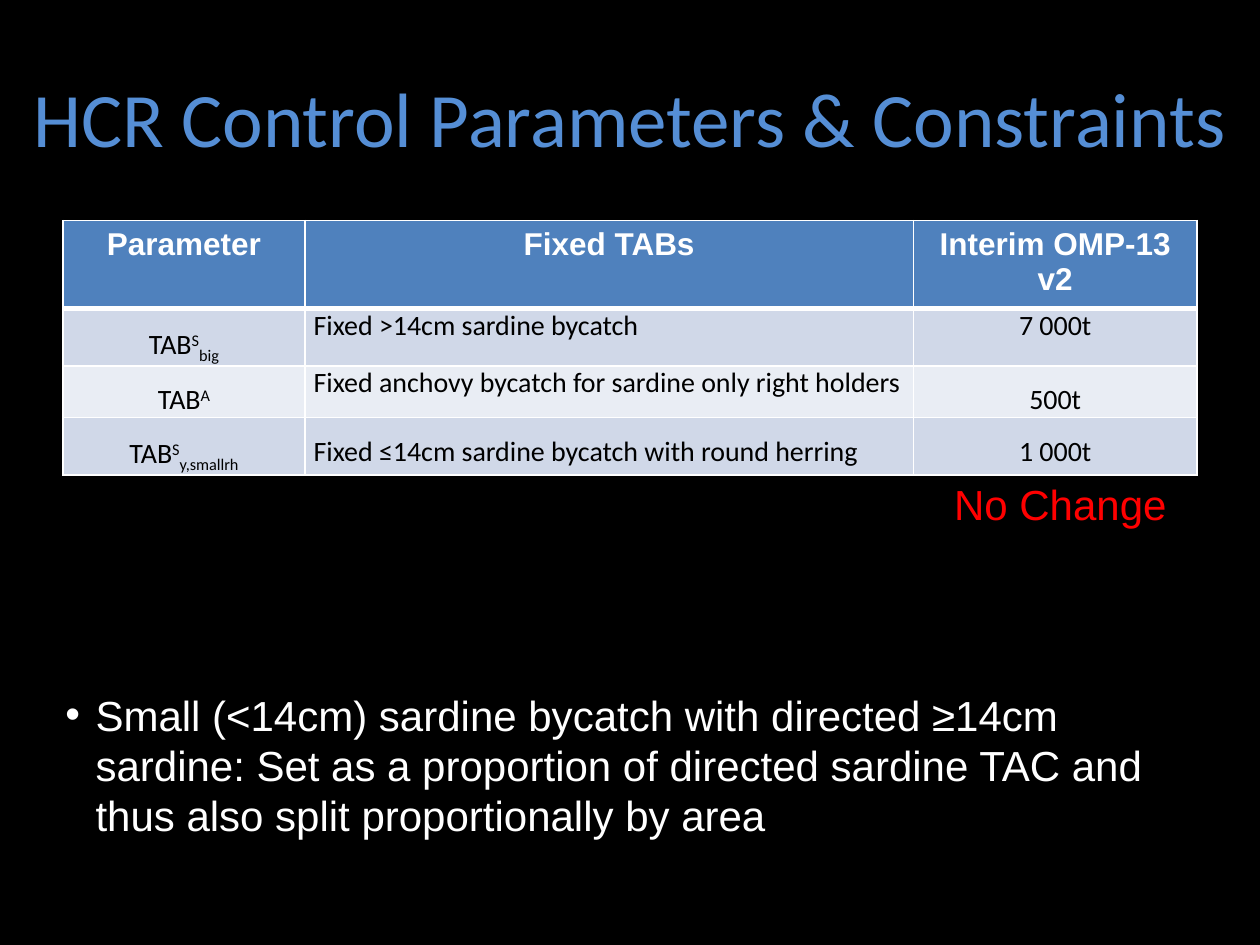
from dataclasses import dataclass
from lxml.etree import SubElement
from pptx import Presentation
from pptx.dml.color import RGBColor as RGB
from pptx.enum.text import MSO_ANCHOR as Anchor, PP_ALIGN as Align
from pptx.oxml.ns import qn
from pptx.util import Inches, Pt


@dataclass(frozen=True)
class Theme:
    background: str = "000000"
    title: str = "558ED5"
    header: str = "4F81BD"
    bands: tuple = ("D0D8E8", "E9EDF4")
    light: str = "FFFFFF"
    dark: str = "000000"
    alert: str = "FF0000"
    heading_font: str = "Calibri"
    body_font: str = "Arial"
    title_size: int = 44
    note_size: int = 24
    header_size: int = 18
    cell_size: int = 16


THEME = Theme()
WIDTH, HEIGHT = 10, 7.5
TITLE = "HCR Control Parameters & Constraints"
HEADERS = ["Parameter", "Fixed TABs", "Interim OMP-13 v2"]
CENTER, LEFT, JUSTIFY = Align.CENTER, Align.LEFT, Align.JUSTIFY
SUPER, SUB = 30, -25
ROWS = [
    [([("TAB", 0), ("S", SUPER), ("big", SUB)], CENTER, 1.5),
     ("Fixed >14cm sardine bycatch", LEFT, 1),
     ("7 000t", CENTER, 1)],
    [([("TAB", 0), ("A", SUPER)], CENTER, 1.5),
     ("Fixed anchovy bycatch for sardine only right holders", LEFT, 1),
     ("500t", CENTER, 1.5)],
    [([("TAB", 0), ("S", SUPER), ("y,smallrh", SUB)], CENTER, 1.5),
     ("Fixed ≤14cm sardine bycatch with round herring", JUSTIFY, 1.5),
     ("1 000t", CENTER, 1.5)],
]
VERDICT = "No Change"
BYCATCH_RULE = (
    "Small (<14cm) sardine bycatch with directed ≥14cm sardine: Set as a "
    "proportion of directed sardine TAC and thus also split proportionally by area"
)
MARGIN = WIDTH * 0.05
TABLE_TOP, ROW_HEIGHT = 1.75, 0.41
COLUMN_WIDTHS = [1.92, 4.83, 2.25]
BULLET_INDENT = 0.24


def write(frame, text, *, size, color, font=THEME.body_font, bold=False,
          align=LEFT, spacing=None, after=None, bullet=None):
    paragraph = frame.paragraphs[0]
    paragraph.alignment = align
    if spacing:
        paragraph.line_spacing = float(spacing)
    if after is not None:
        paragraph.space_after = Pt(after)
    if bullet:
        props = paragraph._p.get_or_add_pPr()
        props.set("marL", str(Inches(BULLET_INDENT)))
        props.set("indent", str(-Inches(BULLET_INDENT)))
        SubElement(props, qn("a:buFont"), typeface=THEME.body_font)
        SubElement(props, qn("a:buChar"), char=bullet)
    for words, baseline in [(text, 0)] if isinstance(text, str) else text:
        run = paragraph.add_run()
        run.text = words
        run.font.name, run.font.size, run.font.bold = font, Pt(size), bold
        run.font.color.rgb = RGB.from_string(color)
        if baseline:
            run.font._element.set("baseline", str(baseline * 1000))


def add_text(slide, box, text, *, anchor=Anchor.TOP, **style):
    frame = slide.shapes.add_textbox(*map(Inches, box)).text_frame
    frame.word_wrap = True
    frame.vertical_anchor = anchor
    write(frame, text, **style)


def paint_cell(cell, fill, bottom_width):
    props = cell._tc.get_or_add_tcPr()
    for side, width in zip("LRTB", (1, 1, 1, bottom_width)):
        border = SubElement(props, qn(f"a:ln{side}"), w=str(Pt(width)))
        SubElement(SubElement(border, qn("a:solidFill")), qn("a:srgbClr"), val=THEME.light)
    cell.fill.solid()
    cell.fill.fore_color.rgb = RGB.from_string(fill)


def add_parameters(slide):
    row_count = len(ROWS) + 1
    table = slide.shapes.add_table(
        row_count, len(HEADERS), Inches(MARGIN), Inches(TABLE_TOP),
        Inches(sum(COLUMN_WIDTHS)), Inches(ROW_HEIGHT * row_count)).table
    for column, width in zip(table.columns, COLUMN_WIDTHS):
        column.width = Inches(width)
    for row in table.rows:
        row.height = Inches(ROW_HEIGHT)
    for c, heading in enumerate(HEADERS):
        cell = table.cell(0, c)
        paint_cell(cell, THEME.header, 3)
        write(cell.text_frame, heading, size=THEME.header_size,
              color=THEME.light, bold=True, align=CENTER)
    for r, entries in enumerate(ROWS):
        for c, (text, align, spacing) in enumerate(entries):
            cell = table.cell(r + 1, c)
            cell.margin_left = cell.margin_right = Inches(0.07)
            cell.margin_top = cell.margin_bottom = 0
            paint_cell(cell, THEME.bands[r % 2], 1)
            write(cell.text_frame, text, size=THEME.cell_size, color=THEME.dark,
                  font=THEME.heading_font, align=align, spacing=spacing, after=3)


def main():
    deck = Presentation()
    deck.slide_width, deck.slide_height = Inches(WIDTH), Inches(HEIGHT)
    slide = deck.slides.add_slide(deck.slide_layouts[6])
    slide.background.fill.solid()
    slide.background.fill.fore_color.rgb = RGB.from_string(THEME.background)
    add_text(slide, (0, HEIGHT * 0.04, WIDTH, 1.25), TITLE, anchor=Anchor.MIDDLE,
             size=THEME.title_size, color=THEME.title,
             font=THEME.heading_font, align=CENTER)
    add_parameters(slide)
    add_text(slide, (7.25, HEIGHT * 0.5, 2.33, 0.5), VERDICT,
             size=THEME.note_size, color=THEME.alert, align=CENTER)
    add_text(slide, (0.42, 5.42, 9.17, 1.62), BYCATCH_RULE,
             size=THEME.note_size, color=THEME.light, bullet="•")
    deck.save("out.pptx")


if __name__ == "__main__":
    main()
